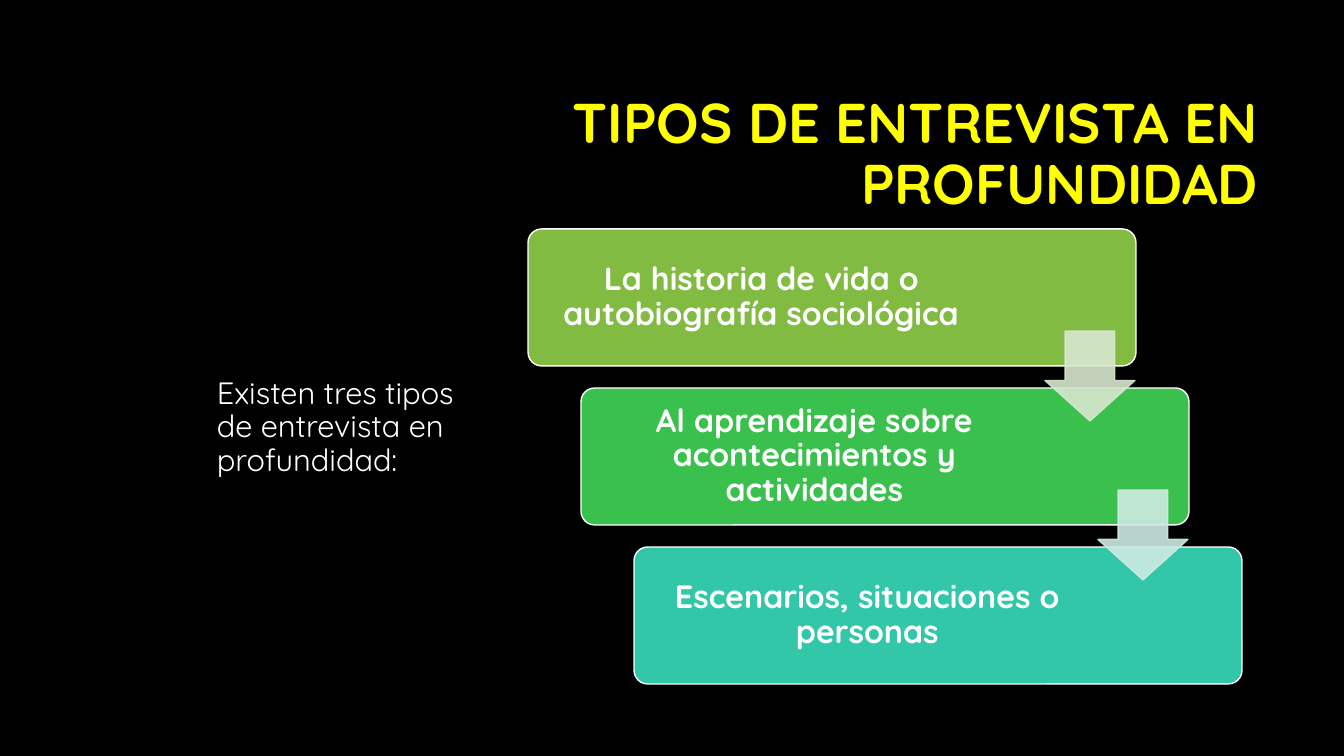
"""Build the slide on the types of in-depth interview."""
import pptx
import pptx.dml.color
import pptx.enum.shapes
import pptx.enum.text
import pptx.oxml
import pptx.oxml.ns
import pptx.util

RGBColor = pptx.dml.color.RGBColor
Align = pptx.enum.text.PP_ALIGN
Anchor = pptx.enum.text.MSO_ANCHOR
Preset = pptx.enum.shapes.MSO_SHAPE

BLACK = RGBColor(0x00, 0x00, 0x00)
WHITE = RGBColor(0xFF, 0xFF, 0xFF)
YELLOW = RGBColor(0xFF, 0xFF, 0x00)
OLIVE = RGBColor(0x81, 0xBB, 0x42)
GREEN = RGBColor(0x3A, 0xC1, 0x4D)
TEAL = RGBColor(0x32, 0xC7, 0xA9)
PALE_OLIVE = RGBColor(0xD8, 0xE7, 0xCF)
PALE_TEAL = RGBColor(0xCD, 0xEB, 0xE2)

TITLE = "TIPOS DE ENTREVISTA EN PROFUNDIDAD"
INTRO = "Existen tres tipos de entrevista en profundidad:"
INTERVIEW_TYPES = [
    ("La historia de vida o autobiografía sociológica", OLIVE),
    ("Al aprendizaje sobre acontecimientos y actividades", GREEN),
    ("Escenarios, situaciones o personas", TEAL),
]
ARROW_COLORS = [PALE_OLIVE, PALE_TEAL]

TITLE_BOX = (163, 85, 1105, 142)
INTRO_BOX = (207, 373, 268, 298)
FIRST_CARD = (528, 229, 608, 137)
FIRST_ARROW = (1045, 331, 90, 90)
STEP_X, STEP_Y = 53, 159
CARD_INSETS = {"margin_left": 10, "margin_top": 10, "margin_right": 151, "margin_bottom": 10}
TITLE_FONT = {"size": pptx.util.Pt(40), "bold": True}
INTRO_FONT = {"size": pptx.util.Pt(22), "bold": False}
CARD_FONT = {"size": pptx.util.Pt(23), "bold": True}


def px(length):
    return round(length * 914400 / 100.8)


def place(box, index=0):
    left, top, width, height = box
    return [px(n) for n in (left + index * STEP_X, top + index * STEP_Y, width, height)]


def write(shape, text, color, font, align, anchor):
    frame = shape.text_frame
    frame.word_wrap = True
    frame.vertical_anchor = anchor
    paragraph = frame.paragraphs[0]
    paragraph.alignment = align
    paragraph.line_spacing = 0.9
    run = paragraph.add_run()
    run.text = text
    for name, value in {"name": "Quicksand", **font}.items():
        setattr(run.font, name, value)
    run.font.color.rgb = color


def draw(slide, preset, bounds, adjustments, fill, outline):
    shape = slide.shapes.add_shape(preset, *bounds)
    shape.shadow.inherit = False
    for index, value in enumerate(adjustments):
        shape.adjustments[index] = value
    shape.fill.solid()
    shape.fill.fore_color.rgb = fill
    shape.line.color.rgb = outline
    shape.line.width = pptx.util.Pt(1)
    return shape


def main():
    presentation = pptx.Presentation()
    presentation.slide_width, presentation.slide_height = px(1344), px(756)
    slide = presentation.slides.add_slide(presentation.slide_layouts[6])
    slide.background.fill.solid()
    slide.background.fill.fore_color.rgb = BLACK

    title = slide.shapes.add_textbox(*place(TITLE_BOX))
    write(title, TITLE, YELLOW, TITLE_FONT, Align.RIGHT, Anchor.MIDDLE)
    intro = slide.shapes.add_textbox(*place(INTRO_BOX))
    write(intro, INTRO, WHITE, INTRO_FONT, Align.LEFT, Anchor.TOP)

    for index, (label, color) in enumerate(INTERVIEW_TYPES):
        card = draw(slide, Preset.ROUNDED_RECTANGLE, place(FIRST_CARD, index), [0.1], color, WHITE)
        for name, value in CARD_INSETS.items():
            setattr(card.text_frame, name, px(value))
        write(card, label, WHITE, CARD_FONT, Align.CENTER, Anchor.MIDDLE)

    for index, color in enumerate(ARROW_COLORS):
        arrow = draw(slide, Preset.DOWN_ARROW, place(FIRST_ARROW, index), [0.55, 0.45], color, color)
        for swatch in arrow._element.spPr.iter(pptx.oxml.ns.qn("a:srgbClr")):
            alpha = pptx.oxml.parse_xml(f'<a:alpha {pptx.oxml.ns.nsdecls("a")} val="90000"/>')
            swatch.append(alpha)

    presentation.save("out.pptx")


if __name__ == "__main__":
    main()
